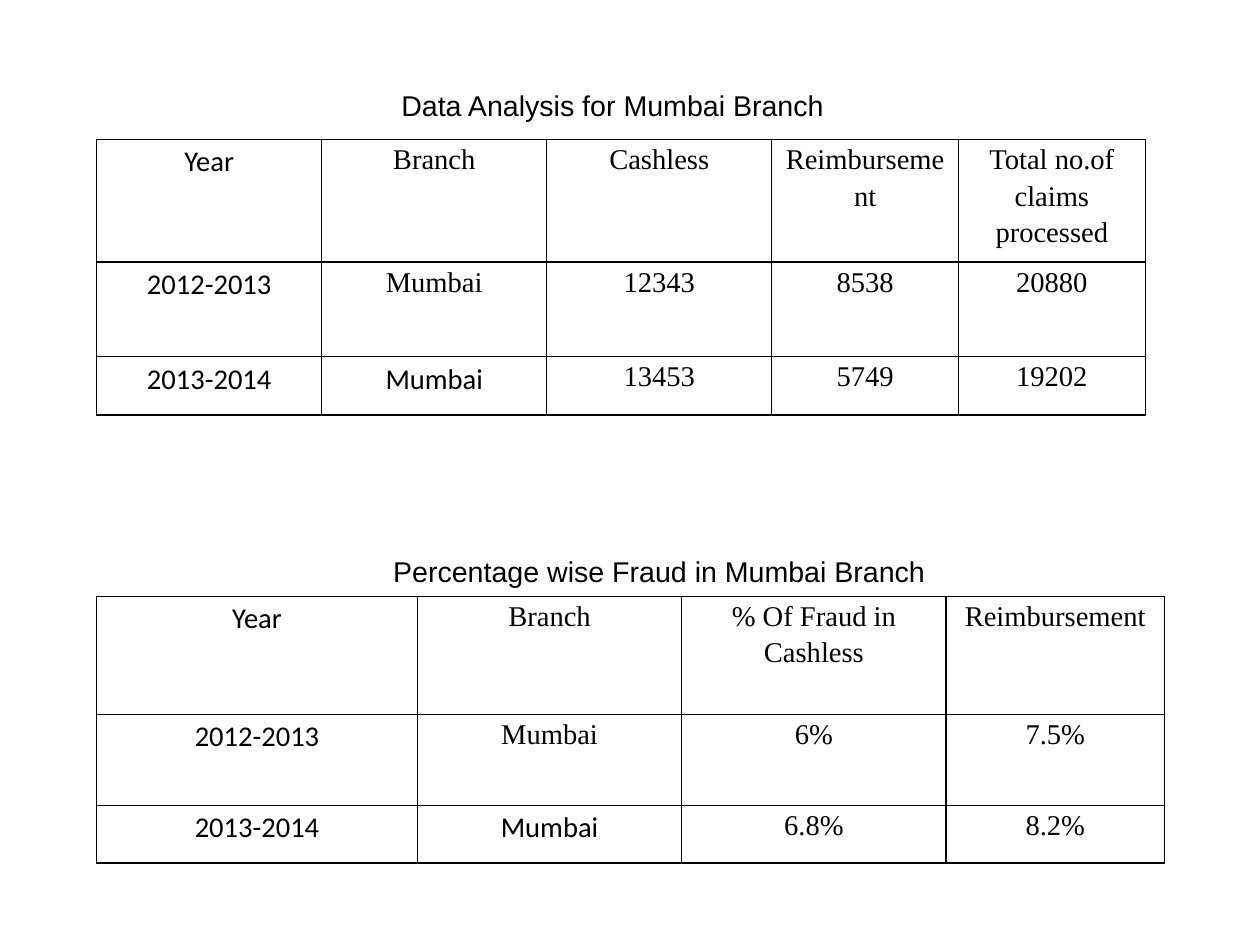
import pptx
import pptx.dml.color
import pptx.enum.text
import pptx.oxml
import pptx.oxml.ns
import pptx.util

COLORS = {"ink": "000000", "page": "FFFFFF"}
PX = 9000  # EMU; 40 px to the centimetre
PAGE_SIZE = (1120, 840)
TEXT_SIZE = pptx.util.Pt(18)
HEADING_FONT, LABEL_FONT, BODY_FONT = "Arial", "Calibri", "Times New Roman"
SIDE_MARGIN = 7

SECTIONS = [
    {
        "heading": "Data Analysis for Mumbai Branch",
        "heading_at": (230, 73, 629, 41),
        "table_at": (86, 124),
        "columns": [200, 200, 200, 166, 166],
        "rows": [109, 84, 52],
        "cells": [
            ("Year", "Branch", "Cashless", "Reimbursement", "Total no.of claims processed"),
            ("2012-2013", "Mumbai", "12343", "8538", "20880"),
            ("2013-2014", "Mumbai", "13453", "5749", "19202"),
        ],
    },
    {
        "heading": "Percentage wise Fraud in Mumbai Branch",
        "heading_at": (239, 487, 694, 41),
        "table_at": (86, 530),
        "columns": [285, 235, 235, 194],
        "rows": [105, 81, 51],
        "cells": [
            ("Year", "Branch", "% Of Fraud in Cashless", "Reimbursement"),
            ("2012-2013", "Mumbai", "6%", "7.5%"),
            ("2013-2014", "Mumbai", "6.8%", "8.2%"),
        ],
    },
]


def px(*lengths):
    """Turn px lengths into EMU."""
    return [pptx.util.Emu(length * PX) for length in lengths]


def rgb(name):
    return pptx.dml.color.RGBColor.from_string(COLORS[name])


def format_text(para, font_name):
    para.alignment = pptx.enum.text.PP_ALIGN.CENTER
    para.font.name = font_name
    para.font.size = TEXT_SIZE
    para.font.bold = False
    para.font.color.rgb = rgb("ink")


def add_borders(cell):
    properties = cell._tc.get_or_add_tcPr()
    for side in ("lnL", "lnR", "lnT", "lnB"):
        properties.append(pptx.oxml.parse_xml(
            f'<a:{side} {pptx.oxml.ns.nsdecls("a")} w="{pptx.util.Pt(1)}">'
            f'<a:solidFill><a:srgbClr val="{COLORS["ink"]}"/></a:solidFill></a:{side}>'))


def fill_heading(box, section):
    box.left, box.top, box.width, box.height = px(*section["heading_at"])
    frame = box.text_frame
    frame.word_wrap = True
    frame.auto_size = pptx.enum.text.MSO_AUTO_SIZE.SHAPE_TO_FIT_TEXT
    frame.vertical_anchor = pptx.enum.text.MSO_ANCHOR.TOP
    frame.text = section["heading"]
    format_text(frame.paragraphs[0], HEADING_FONT)


def fill_cell(cell, text, font_name):
    add_borders(cell)
    cell.fill.background()
    cell.margin_left, cell.margin_right, cell.margin_top, cell.margin_bottom = px(
        SIDE_MARGIN, SIDE_MARGIN, 0, 0)
    cell.text = text
    para = cell.text_frame.paragraphs[0]
    format_text(para, font_name)
    para.line_spacing = 1.15


def add_data_table(page, section):
    columns, rows = section["columns"], section["rows"]
    table = page.shapes.add_table(
        len(rows), len(columns),
        *px(*section["table_at"], sum(columns), sum(rows))).table
    table.first_row = table.horz_banding = False
    for column, width in zip(table.columns, px(*columns)):
        column.width = width
    for row, height in zip(table.rows, px(*rows)):
        row.height = height
    last_row = len(rows) - 1
    for r, texts in enumerate(section["cells"]):
        for c, text in enumerate(texts):
            is_label = c == 0 or (r == last_row and c == 1)
            fill_cell(table.cell(r, c), text, LABEL_FONT if is_label else BODY_FONT)


def main():
    deck = pptx.Presentation()
    deck.slide_width, deck.slide_height = px(*PAGE_SIZE)
    page = deck.slides.add_slide(deck.slide_layouts[5])
    page.background.fill.solid()
    page.background.fill.fore_color.rgb = rgb("page")
    for index, section in enumerate(SECTIONS):
        box = page.shapes.title if index == 0 else page.shapes.add_textbox(0, 0, 0, 0)
        fill_heading(box, section)
        add_data_table(page, section)
    deck.save("out.pptx")


if __name__ == "__main__":
    main()
